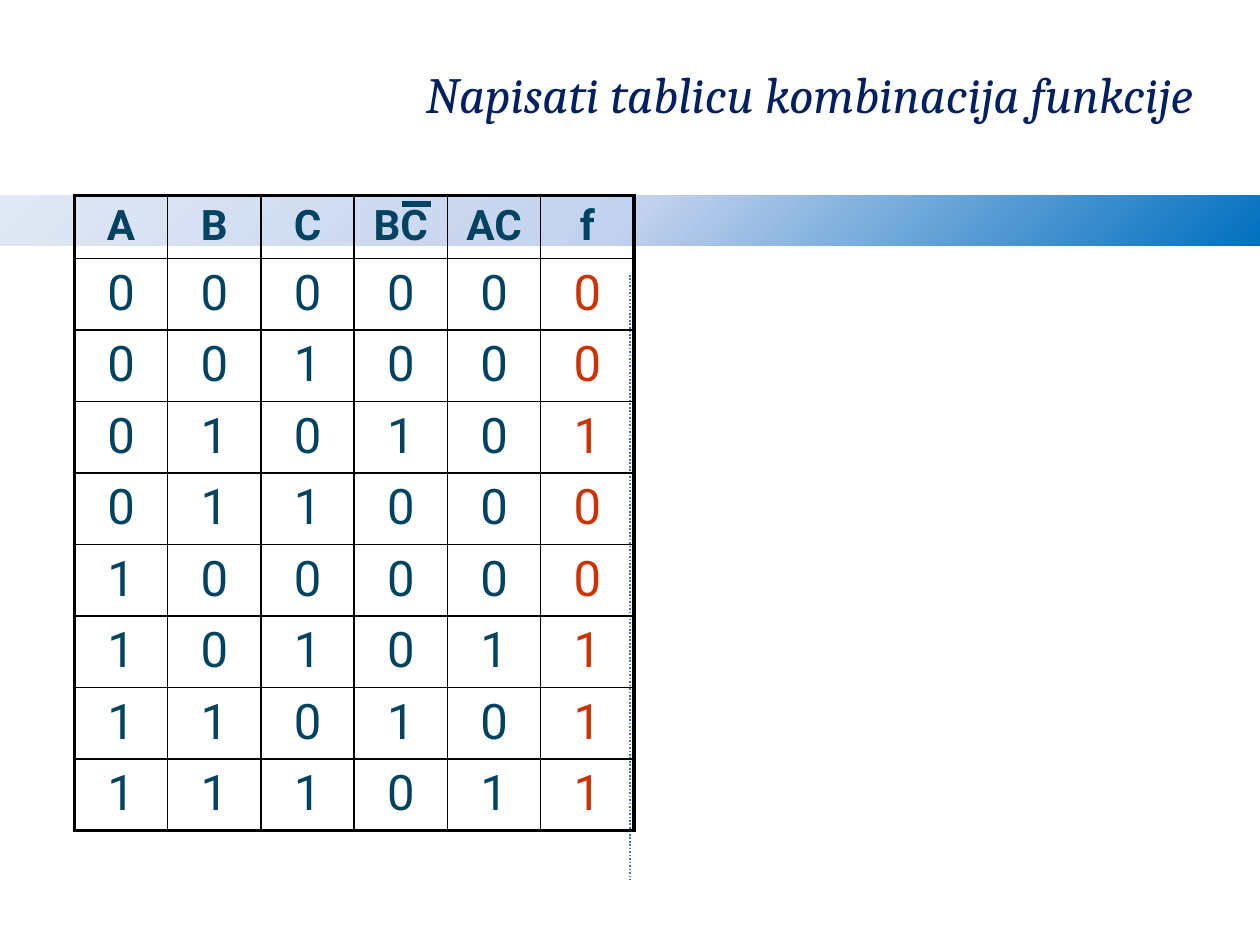
import itertools
from dataclasses import dataclass

import pptx
import pptx.dml.color
import pptx.enum.dml
import pptx.enum.shapes
import pptx.enum.text
import pptx.oxml
import pptx.oxml.ns
import pptx.util
from lxml import etree

Cm = pptx.util.Cm
Pt = pptx.util.Pt
qn = pptx.oxml.ns.qn

NAVY, TEAL, RED, BLACK = "002060", "004360", "CC3300", "000000"
HEADERS = ["A", "B", "C", "BC", "AC", "f"]
THIN, THICK = 1, 2.25


@dataclass
class Rule:
    x1: float
    y1: float
    x2: float
    y2: float
    color: str
    width: float
    dotted: bool = False


def rgb(color: str) -> pptx.dml.color.RGBColor:
    return pptx.dml.color.RGBColor.from_string(color)


def style_text(p, font: str, size: float, color: str, align, bold=False, italic=False) -> None:
    p.alignment = align
    for r in p.runs:
        r.font.name = font
        r.font.size = Pt(size)
        r.font.bold = bold
        r.font.italic = italic
        r.font.color.rgb = rgb(color)


def add_rule(s, rule: Rule) -> None:
    line = s.shapes.add_connector(
        pptx.enum.shapes.MSO_CONNECTOR.STRAIGHT,
        Cm(rule.x1), Cm(rule.y1), Cm(rule.x2), Cm(rule.y2))
    line.line.color.rgb = rgb(rule.color)
    line.line.width = Pt(rule.width)
    if rule.dotted:
        line.line.dash_style = pptx.enum.dml.MSO_LINE.ROUND_DOT
    etree.SubElement(line._element.spPr, qn("a:effectLst"))


def add_band(s) -> None:
    sp = s.shapes.add_shape(
        pptx.enum.shapes.MSO_SHAPE.RECTANGLE, 0, Cm(3.94), Cm(25.4), Cm(1.02))
    sp.shadow.inherit = False
    sp.line.fill.background()
    sp.fill.gradient()
    grad = sp._element.spPr.find(qn("a:gradFill"))
    for child in list(grad):
        grad.remove(child)
    stops = etree.SubElement(grad, qn("a:gsLst"))
    for pos, color in [(0, "0070C0"), (50, "C2D1ED"), (100, "E1E8F5")]:
        stop = etree.SubElement(stops, qn("a:gs"), pos=str(pos * 1000))
        etree.SubElement(stop, qn("a:srgbClr"), val=color)
    circle = etree.SubElement(grad, qn("a:path"), {"path": "circle"})
    etree.SubElement(circle, qn("a:fillToRect"), l="100000", t="100000")


def add_title(s) -> None:
    sp = s.shapes.add_textbox(Cm(0.84), Cm(0.64), Cm(23.7), Cm(3.1))
    tf = sp.text_frame
    tf.word_wrap = True
    tf.vertical_anchor = pptx.enum.text.MSO_ANCHOR.BOTTOM
    tf.margin_right = Cm(0.48)
    tf.margin_bottom = Cm(1.25)
    tf.text = "Napisati tablicu kombinacija funkcije"
    style_text(tf.paragraphs[0], "Cambria", 29, NAVY,
               pptx.enum.text.PP_ALIGN.RIGHT, italic=True)


def set_borders(cell, widths: dict[str, float]) -> None:
    tc_pr = cell._tc.get_or_add_tcPr()
    for side, width in widths.items():
        ln = etree.SubElement(tc_pr, qn(f"a:ln{side}"), w=str(int(Pt(width))))
        fill = etree.SubElement(ln, qn("a:solidFill"))
        etree.SubElement(fill, qn("a:srgbClr"), val=BLACK)


def truth_rows() -> list[list[str]]:
    rows = []
    for a, b, c in itertools.product((0, 1), repeat=3):
        b_not_c, a_c = b & (1 - c), a & c
        rows.append([str(v) for v in (a, b, c, b_not_c, a_c, b_not_c | a_c)])
    return rows


def add_truth_table(s) -> None:
    rows = [HEADERS] + truth_rows()
    last_row, last_col = len(rows) - 1, len(HEADERS) - 1
    table = s.shapes.add_table(
        len(rows), len(HEADERS), Cm(1.5), Cm(3.94), Cm(11.28), Cm(12.2)).table
    for col in table.columns:
        col.width = Cm(1.88)
    for i, values in enumerate(rows):
        header = i == 0
        table.rows[i].height = Cm(1.24 if header else 1.37)
        for j, value in enumerate(values):
            cell = table.cell(i, j)
            set_borders(cell, {
                "L": THICK if j == 0 else THIN,
                "R": THICK if j == last_col else THIN,
                "T": THICK if header else THIN,
                "B": THICK if i == last_row else THIN,
            })
            cell.fill.background()
            cell.text_frame.text = value
            style_text(cell.text_frame.paragraphs[0], "Roboto", 24 if header else 28,
                       RED if j == last_col and not header else TEAL,
                       pptx.enum.text.PP_ALIGN.CENTER, bold=header)


def main() -> None:
    prs = pptx.Presentation()
    prs.slide_width, prs.slide_height = Cm(25.4), Cm(19.05)
    s = prs.slides.add_slide(prs.slide_layouts[6])
    add_band(s)
    add_rule(s, Rule(12.7, 5.54, 12.7, 17.73, "4875AC", 1, dotted=True))
    add_title(s)
    add_truth_table(s)
    add_rule(s, Rule(8.1, 4.11, 8.69, 4.11, TEAL, 3))
    prs.save("out.pptx")


if __name__ == "__main__":
    main()
